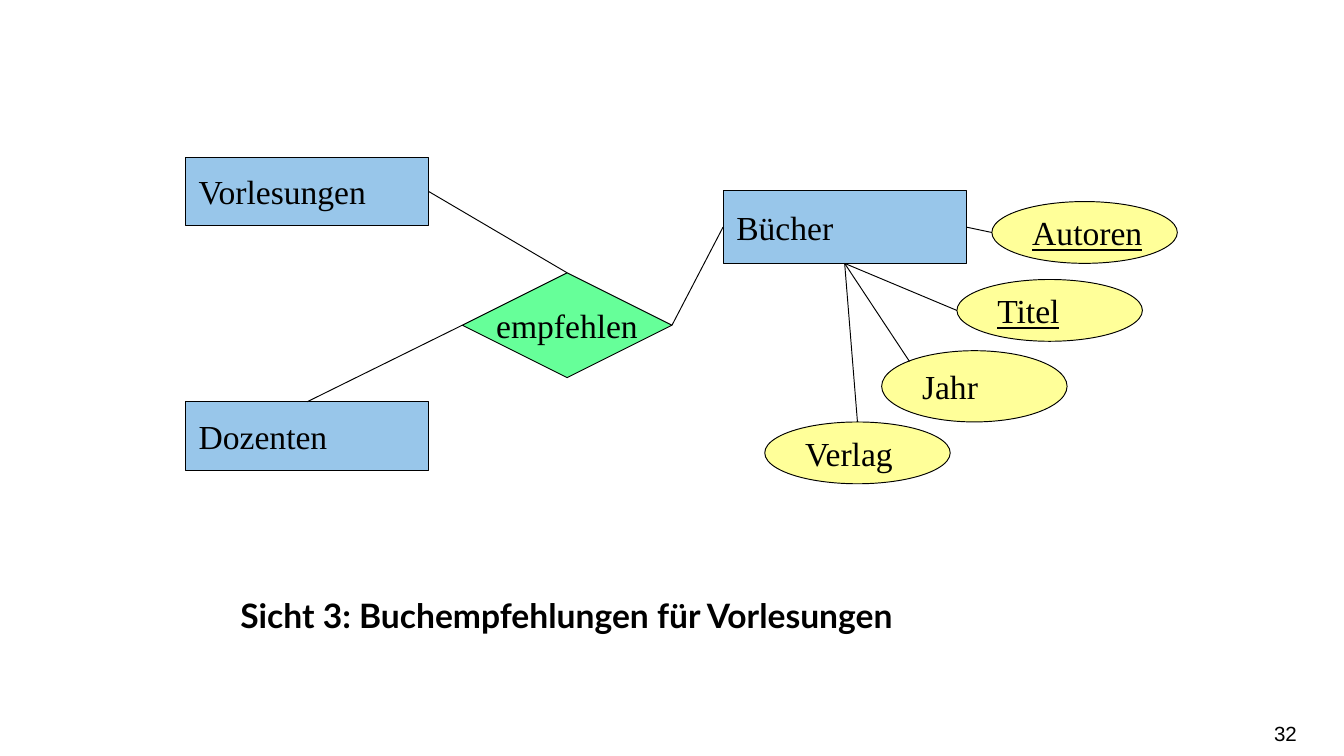
from lxml import etree
from pptx import Presentation
from pptx.dml.color import RGBColor
from pptx.enum.shapes import MSO_CONNECTOR, MSO_SHAPE as Shape
from pptx.enum.text import MSO_ANCHOR as Anchor, PP_ALIGN as Align
from pptx.oxml.ns import qn
from pptx.util import Inches, Pt

BLACK = "000000"
ENTITY_BLUE = "98C6EA"
ATTRIBUTE_YELLOW = "FFFF99"
RELATION_GREEN = "66FF99"

# Anchor points as fractions of a shape's width and height
TOP, LEFT, BOTTOM, RIGHT = (0.5, 0), (0, 0.5), (0.5, 1), (1, 0.5)
UPPER_LEFT_ARC = (0.15, 0.15)


def color(hex_string):
    return RGBColor.from_string(hex_string)


def write_text(shape, text, font="Times New Roman", size=18, bold=False,
               underline=False, align=Align.LEFT, anchor=Anchor.MIDDLE, wrap=False):
    frame = shape.text_frame
    frame.word_wrap = wrap
    frame.vertical_anchor = anchor
    paragraph = frame.paragraphs[0]
    paragraph.alignment = align
    run = paragraph.add_run()
    run.text = text
    run.font.name = font
    run.font.size = Pt(size)
    run.font.bold = bold
    run.font.underline = underline
    run.font.color.rgb = color(BLACK)


def set_outline(line):
    line.color.rgb = color(BLACK)
    line.width = Pt(0.5)


def add_node(slide, kind, fill, text, left, top, width, height, **text_format):
    shape = slide.shapes.add_shape(kind, Inches(left), Inches(top),
                                   Inches(width), Inches(height))
    shape.shadow.inherit = False
    shape.fill.solid()
    shape.fill.fore_color.rgb = color(fill)
    set_outline(shape.line)
    write_text(shape, text, **text_format)
    return shape


def add_entity(slide, text, left, top, height=0.51):
    return add_node(slide, Shape.RECTANGLE, ENTITY_BLUE, text, left, top, 1.81, height)


def add_attribute(slide, text, left, top, height=0.46, key=False):
    return add_node(slide, Shape.OVAL, ATTRIBUTE_YELLOW, text, left, top, 1.38, height,
                    underline=key)


def point_on(shape, side):
    x, y = side
    return int(shape.left + x * shape.width), int(shape.top + y * shape.height)


def add_link(slide, start, start_side, end, end_side):
    connector = slide.shapes.add_connector(
        MSO_CONNECTOR.STRAIGHT, *point_on(start, start_side), *point_on(end, end_side))
    set_outline(connector.line)
    etree.SubElement(connector._element.spPr, qn("a:effectLst"))


def add_text(slide, text, left, top, width, height, side_inset=0.1, **text_format):
    box = slide.shapes.add_textbox(Inches(left), Inches(top), Inches(width), Inches(height))
    box.text_frame.margin_left = box.text_frame.margin_right = Inches(side_inset)
    write_text(box, text, wrap=True, **text_format)


def main():
    presentation = Presentation()
    presentation.slide_width = Inches(10)
    presentation.slide_height = Inches(10 * 9 / 16)
    slide = presentation.slides.add_slide(presentation.slide_layouts[6])

    lectures = add_entity(slide, "Vorlesungen", 1.38, 1.17)
    lecturers = add_entity(slide, "Dozenten", 1.38, 2.99)
    books = add_entity(slide, "Bücher", 5.38, 1.42, height=0.54)

    authors = add_attribute(slide, "Autoren", 7.38, 1.5, key=True)
    title = add_attribute(slide, "Titel", 7.12, 2.08, key=True)
    year = add_attribute(slide, "Jahr", 6.56, 2.61, height=0.53)
    publisher = add_attribute(slide, "Verlag", 5.69, 3.14)

    recommend = add_node(slide, Shape.DIAMOND, RELATION_GREEN, "empfehlen",
                         3.44, 2.03, 1.56, 0.78, align=Align.CENTER)

    for start, start_side, end, end_side in (
        (lectures, RIGHT, recommend, TOP),
        (recommend, LEFT, lecturers, TOP),
        (books, LEFT, recommend, RIGHT),
        (books, RIGHT, authors, LEFT),
        (books, BOTTOM, title, LEFT),
        (books, BOTTOM, year, UPPER_LEFT_ARC),
        (books, BOTTOM, publisher, TOP),
    ):
        add_link(slide, start, start_side, end, end_side)

    add_text(slide, "Sicht 3: Buchempfehlungen für Vorlesungen", 1.69, 4.38, 6.56, 0.4,
             font="Lato", bold=True, anchor=Anchor.TOP)
    add_text(slide, "32", 7.41, 5.31, 2.24, 0.3, side_inset=0,
             font="Arial", size=11, align=Align.RIGHT)

    presentation.save("out.pptx")


if __name__ == "__main__":
    main()
